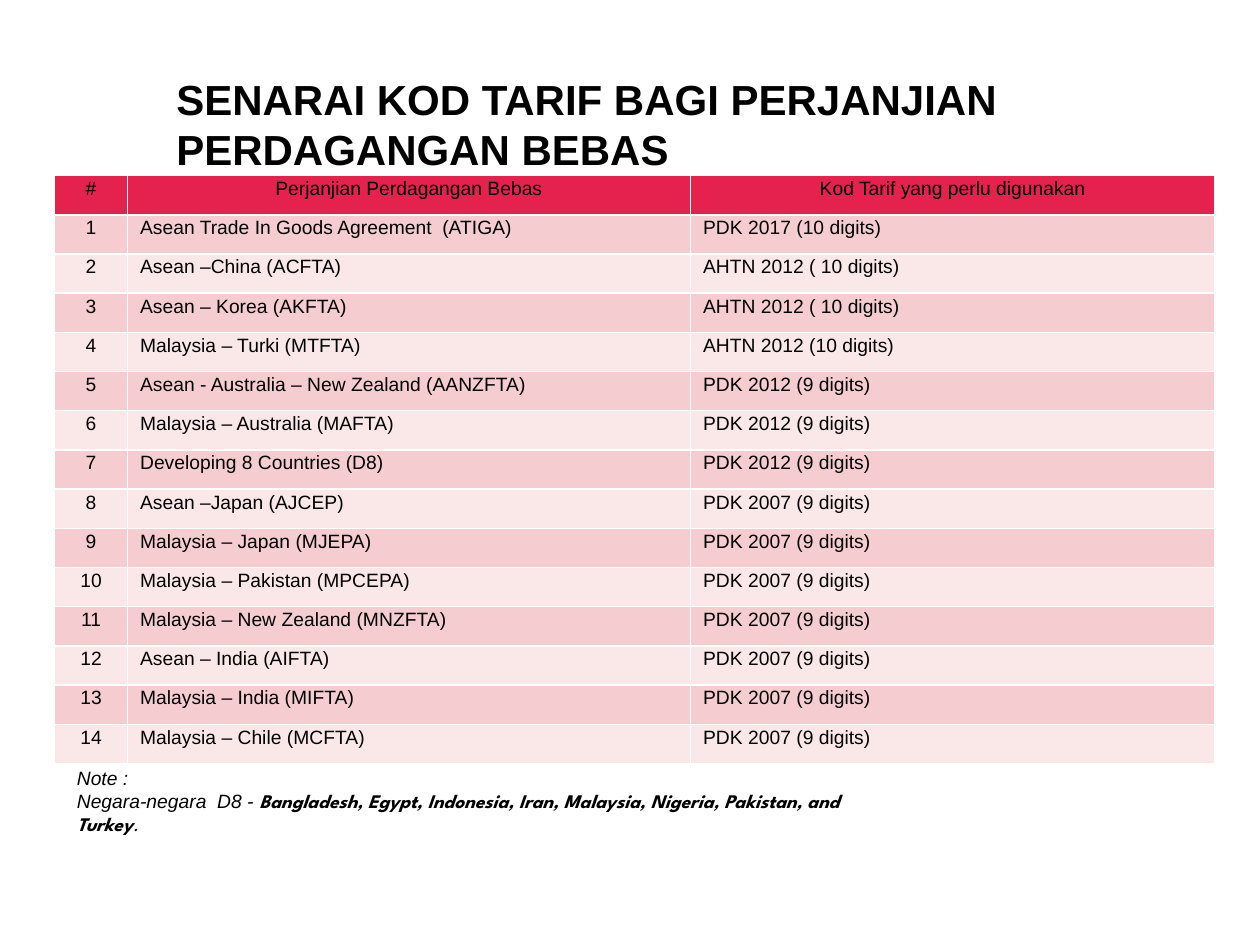
import pptx
import pptx.util
import pptx.dml.color
import pptx.enum.text

Cm = pptx.util.Cm
Pt = pptx.util.Pt
ALIGN = pptx.enum.text.PP_ALIGN
ANCHOR = pptx.enum.text.MSO_ANCHOR

TITLE = "SENARAI KOD TARIF BAGI PERJANJIAN PERDAGANGAN BEBAS"
HEADER = ("#", "Perjanjian Perdagangan Bebas", "Kod Tarif yang perlu digunakan")
AGREEMENTS = [
    ("Asean Trade In Goods Agreement  (ATIGA)", "PDK 2017 (10 digits)"),
    ("Asean –China (ACFTA)", "AHTN 2012 ( 10 digits)"),
    ("Asean – Korea (AKFTA)", "AHTN 2012 ( 10 digits)"),
    ("Malaysia – Turki (MTFTA)", "AHTN 2012 (10 digits)"),
    ("Asean - Australia – New Zealand (AANZFTA)", "PDK 2012 (9 digits)"),
    ("Malaysia – Australia (MAFTA)", "PDK 2012 (9 digits)"),
    ("Developing 8 Countries (D8)", "PDK 2012 (9 digits)"),
    ("Asean –Japan (AJCEP)", "PDK 2007 (9 digits)"),
    ("Malaysia – Japan (MJEPA)", "PDK 2007 (9 digits)"),
    ("Malaysia – Pakistan (MPCEPA)", "PDK 2007 (9 digits)"),
    ("Malaysia – New Zealand (MNZFTA)", "PDK 2007 (9 digits)"),
    ("Asean – India (AIFTA)", "PDK 2007 (9 digits)"),
    ("Malaysia – India (MIFTA)", "PDK 2007 (9 digits)"),
    ("Malaysia – Chile (MCFTA)", "PDK 2007 (9 digits)"),
]
NOTE = [
    [("Note :", "Arial", False)],
    [
        ("Negara-negara  D8 - ", "Arial", False),
        ("Bangladesh, Egypt, Indonesia, Iran, Malaysia, Nigeria, Pakistan, and Turkey",
         "League Spartan", True),
        (".", "League Spartan", False),
    ],
]
COLUMNS = (1.47, 11.35, 10.57)
ROW_HEIGHT = 0.79
HEADER_FILL = "E5224E"
BANDS = ("F5CDD0", "FAE8E9")


def rgb(value):
    return pptx.dml.color.RGBColor.from_string(value)


def add_run(p, text, size, font="Arial", bold=False, italic=False):
    r = p.add_run()
    r.text = text
    r.font.name = font
    r.font.size = Pt(size)
    r.font.bold = bold
    r.font.italic = italic
    r.font.color.rgb = rgb("000000")


def add_title(s):
    sp = s.shapes.title
    sp.left, sp.top, sp.width, sp.height = Cm(3.3), Cm(1.35), Cm(21.59), Cm(1.98)
    tf = sp.text_frame
    tf.word_wrap = True
    tf.auto_size = pptx.enum.text.MSO_AUTO_SIZE.NONE
    tf.vertical_anchor = ANCHOR.TOP
    p = tf.paragraphs[0]
    p.alignment = ALIGN.LEFT
    add_run(p, TITLE, 24, bold=True)


def add_agreements(s):
    rows = [HEADER] + [(str(n), *row) for n, row in enumerate(AGREEMENTS, 1)]
    table = s.shapes.add_table(len(rows), len(COLUMNS), Cm(1.1), Cm(3.54),
                               Cm(sum(COLUMNS)), Cm(ROW_HEIGHT * len(rows))).table
    for column, width in zip(table.columns, COLUMNS):
        column.width = Cm(width)
    for i, row in enumerate(rows):
        table.rows[i].height = Cm(ROW_HEIGHT)
        for j, text in enumerate(row):
            cell = table.cell(i, j)
            cell.fill.solid()
            cell.fill.fore_color.rgb = rgb(BANDS[(i - 1) % 2] if i else HEADER_FILL)
            cell.margin_top = cell.margin_bottom = Cm(0.05)
            p = cell.text_frame.paragraphs[0]
            p.alignment = ALIGN.CENTER if i == 0 or j == 0 else ALIGN.LEFT
            add_run(p, text, 11)


def add_note(s):
    tf = s.shapes.add_textbox(Cm(1.3), Cm(15.32), Cm(16.87), Cm(1.19)).text_frame
    tf.word_wrap = True
    for i, runs in enumerate(NOTE):
        p = tf.add_paragraph() if i else tf.paragraphs[0]
        for text, font, bold in runs:
            add_run(p, text, 11, font, bold, italic=True)


def main():
    prs = pptx.Presentation()
    prs.slide_width, prs.slide_height = Cm(25.4), Cm(19.05)
    s = prs.slides.add_slide(prs.slide_layouts[5])
    add_title(s)
    add_agreements(s)
    add_note(s)
    prs.save("out.pptx")


if __name__ == "__main__":
    main()
